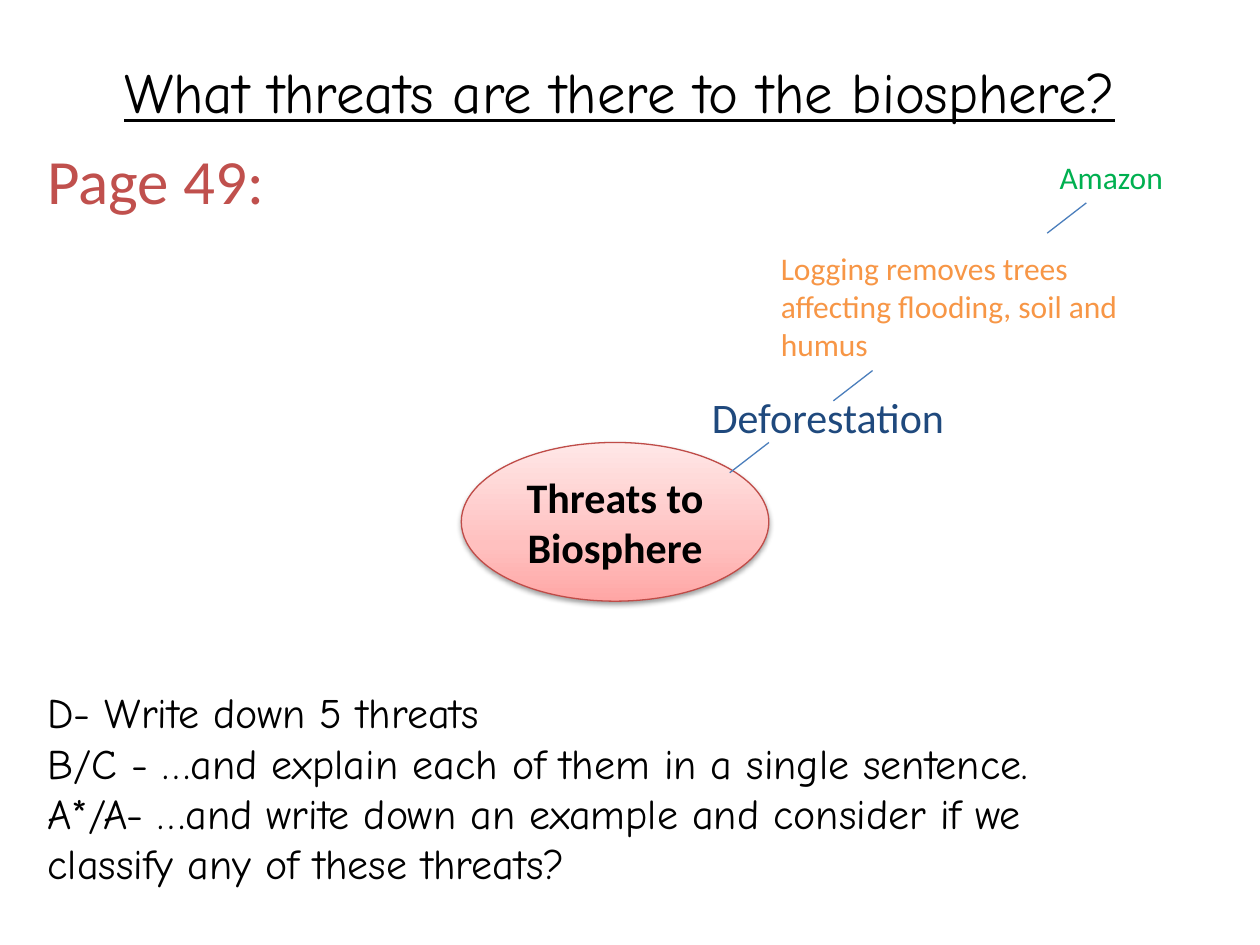
from copy import deepcopy
from lxml.etree import SubElement
from pptx import Presentation
from pptx.dml.color import RGBColor
from pptx.enum.shapes import MSO_CONNECTOR, MSO_SHAPE
from pptx.enum.text import MSO_ANCHOR, PP_ALIGN
from pptx.oxml.ns import qn
from pptx.util import Cm, Pt


def color(code):
    return RGBColor.from_string(code)


class Page:
    sans = "Calibri"
    hand = "Comic Neue"
    black = "000000"
    edge = "BF4C48"
    link = "4B7EBC"
    glow = ((0, "FFA6A5"), (0.35, "FFC0BF"), (1, "FFE7E7"))

    def __init__(self, deck):
        self.slide = deck.slides.add_slide(deck.slide_layouts[5])

    def fill_text(self, frame, lines, size, tint, face, align=PP_ALIGN.LEFT,
                  bold=False, under=False):
        frame.word_wrap = True
        frame.text = "\n".join(lines)
        for para in frame.paragraphs:
            para.alignment = align
            font = para.font
            font.name, font.size = face, Pt(size)
            font.bold, font.underline = bold, under
            font.color.rgb = color(tint)

    def title(self, text, left, top, width, height):
        shape = self.slide.shapes.title
        shape.left, shape.top = Cm(left), Cm(top)
        shape.width, shape.height = Cm(width), Cm(height)
        shape.text_frame.vertical_anchor = MSO_ANCHOR.MIDDLE
        self.fill_text(shape.text_frame, [text], 32.4, self.black, self.hand,
                       PP_ALIGN.CENTER, under=True)

    def label(self, lines, left, top, width, height, size, tint, face=sans):
        box = self.slide.shapes.add_textbox(
            Cm(left), Cm(top), Cm(width), Cm(height))
        self.fill_text(box.text_frame, lines, size, tint, face)

    def oval(self, text, left, top, width, height):
        shape = self.slide.shapes.add_shape(
            MSO_SHAPE.OVAL, Cm(left), Cm(top), Cm(width), Cm(height))
        self.shade(shape.fill)
        shape.line.color.rgb = color(self.edge)
        shape.line.width = Pt(0.75)
        self.drop(shape)
        shape.text_frame.vertical_anchor = MSO_ANCHOR.MIDDLE
        self.fill_text(shape.text_frame, [text], 24, self.black, self.sans,
                       PP_ALIGN.CENTER, bold=True)

    def shade(self, fill):
        fill.gradient()
        fill.gradient_angle = 90
        stops = fill._fill._gradFill.find(qn("a:gsLst"))
        stops.append(deepcopy(stops[0]))
        for stop, (place, tint) in zip(fill.gradient_stops, self.glow):
            stop.color.rgb = color(tint)
            stop.position = place

    def drop(self, shape):
        shape.shadow.inherit = False
        effects = shape._element.spPr.find(qn("a:effectLst"))
        outer = SubElement(
            effects, qn("a:outerShdw"), blurRad=str(Pt(3.1)),
            dist=str(Pt(1.6)), dir="5400000", rotWithShape="0")
        tint = SubElement(outer, qn("a:srgbClr"), val=self.black)
        SubElement(tint, qn("a:alpha"), val="38000")

    def line(self, left, low):
        line = self.slide.shapes.add_connector(
            MSO_CONNECTOR.STRAIGHT, Cm(left), Cm(low),
            Cm(left + 0.79), Cm(low - 0.61))
        line.line.color.rgb = color(self.link)
        line.line.width = Pt(0.75)
        SubElement(line._element.spPr, qn("a:effectLst"))


def main():
    deck = Presentation()
    deck.slide_width, deck.slide_height = Cm(25.4), Cm(19.05)
    page = Page(deck)
    page.title("What threats are there to the biosphere?", 1.7, 0.33, 21.6, 3)
    page.label(["Page 49:"], 0.71, 2.72, 7.8, 3.33, 36, "C0504D")
    page.oval("Threats to Biosphere", 9.3, 8.92, 6.2, 3.2)
    page.label(["Deforestation"], 14.1, 7.77, 7.8, 2.31, 24, "1F497D")
    for left, low in ((14.71, 9.53), (16.8, 8.08), (21.11, 4.7)):
        page.line(left, low)
    page.label(["Logging removes trees affecting flooding, soil and humus"],
               15.49, 4.9, 7.8, 2.57, 18, "F79646")
    page.label(["Amazon"], 21.11, 3.07, 7.8, 1.02, 18, "00B050")
    tasks = [
        "D- Write down 5 threats",
        "B/C - …and explain each of them in a single sentence.",
        "A*/A- …and write down an example and consider if we classify "
        "any of these threats?",
    ]
    page.label(tasks, 0.71, 13.72, 22.6, 4.37, 24, page.black, page.hand)
    deck.save("out.pptx")


if __name__ == "__main__":
    main()
